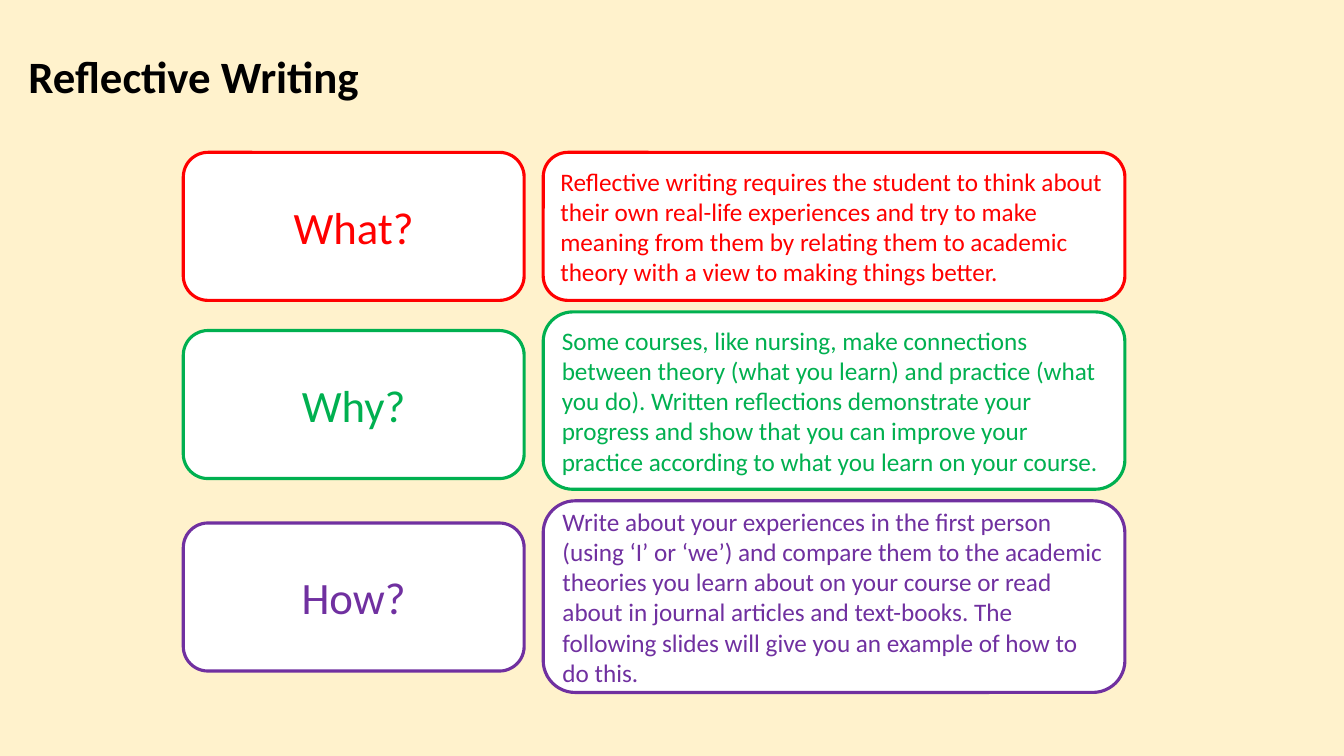
"""Build the Reflective Writing slide: three questions with their answers."""
from pptx import Presentation
from pptx import util as u
from pptx.dml.color import RGBColor
from pptx.enum import shapes, text

TITLE = "Reflective Writing"
ROWS = [
    {"question": "What?", "color": "FF0000", "label_top": 3.84, "height": 3.73,
     "answer": "Reflective writing requires the student to think about their own "
               "real-life experiences and try to make meaning from them by relating "
               "them to academic theory with a view to making things better."},
    {"question": "Why?", "color": "00B050", "label_top": 8.33, "height": 4.47,
     "answer": "Some courses, like nursing, make connections between theory (what you "
               "learn) and practice (what you do). Written reflections demonstrate your "
               "progress and show that you can improve your practice according to what "
               "you learn on your course."},
    {"question": "How?", "color": "7030A0", "label_top": 13.18, "height": 4.83,
     "answer": "Write about your experiences in the first person (using ‘I’ or ‘we’) and "
               "compare them to the academic theories you learn about on your course or "
               "read about in journal articles and text-books. The following slides will "
               "give you an example of how to do this."},
]
FIRST_TOP, GAP = 3.84, 0.29
LABEL_LEFT, LABEL_WIDTH, LABEL_HEIGHT = 4.62, 8.59, 3.73
ANSWER_LEFT, ANSWER_WIDTH = 13.69, 14.66


def rgb(value):
    """Return the colour for a hex string."""
    return RGBColor.from_string(value)


def write(shape, content, size=18, color="000000", bold=False,
          align=text.PP_ALIGN.LEFT, anchor=text.MSO_ANCHOR.MIDDLE):
    """Put formatted text into a shape."""
    frame = shape.text_frame
    frame.word_wrap = True
    frame.vertical_anchor = anchor
    paragraph = frame.paragraphs[0]
    paragraph.alignment = align
    run = paragraph.add_run()
    run.text = content
    run.font.name = "Calibri"
    run.font.size = u.Pt(size)
    run.font.bold = bold
    run.font.color.rgb = rgb(color)


def add_box(slide, left, top, width, height, color):
    """Add a white rounded box with a coloured outline."""
    box = slide.shapes.add_shape(shapes.MSO_SHAPE.ROUNDED_RECTANGLE,
                                 u.Cm(left), u.Cm(top), u.Cm(width), u.Cm(height))
    box.shadow.inherit = False
    box.fill.solid()
    box.fill.fore_color.rgb = rgb("FFFFFF")
    box.line.color.rgb = rgb(color)
    box.line.width = u.Pt(2.25)
    return box


def main():
    """Create and save the presentation."""
    presentation = Presentation()
    presentation.slide_width, presentation.slide_height = u.Cm(33.87), u.Cm(19.05)
    slide = presentation.slides.add_slide(presentation.slide_layouts[5])
    slide.background.fill.solid()
    slide.background.fill.fore_color.rgb = rgb("FFF2CC")

    title = slide.shapes.title
    title.left, title.top = u.Cm(0.46), u.Cm(0.41)
    title.width, title.height = u.Cm(21.26), u.Cm(2.31)
    write(title, TITLE, size=32, bold=True, anchor=text.MSO_ANCHOR.BOTTOM)

    top = FIRST_TOP
    for row in ROWS:
        color = row["color"]
        label = add_box(slide, LABEL_LEFT, row["label_top"], LABEL_WIDTH, LABEL_HEIGHT, color)
        write(label, row["question"], size=32, color=color, align=text.PP_ALIGN.CENTER)
        answer = add_box(slide, ANSWER_LEFT, top, ANSWER_WIDTH, row["height"], color)
        write(answer, row["answer"], color=color)
        top += row["height"] + GAP

    presentation.save("out.pptx")


if __name__ == "__main__":
    main()
